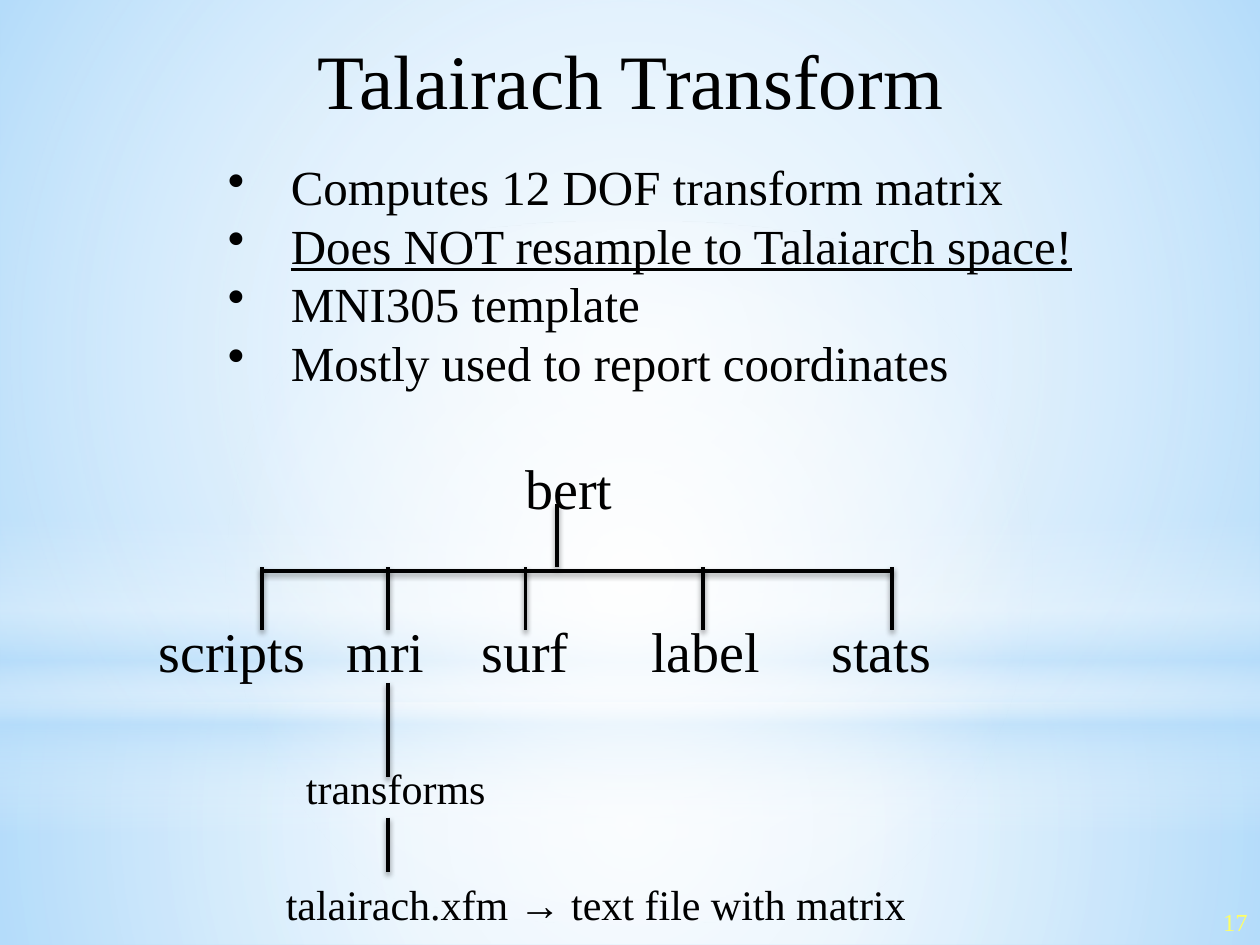
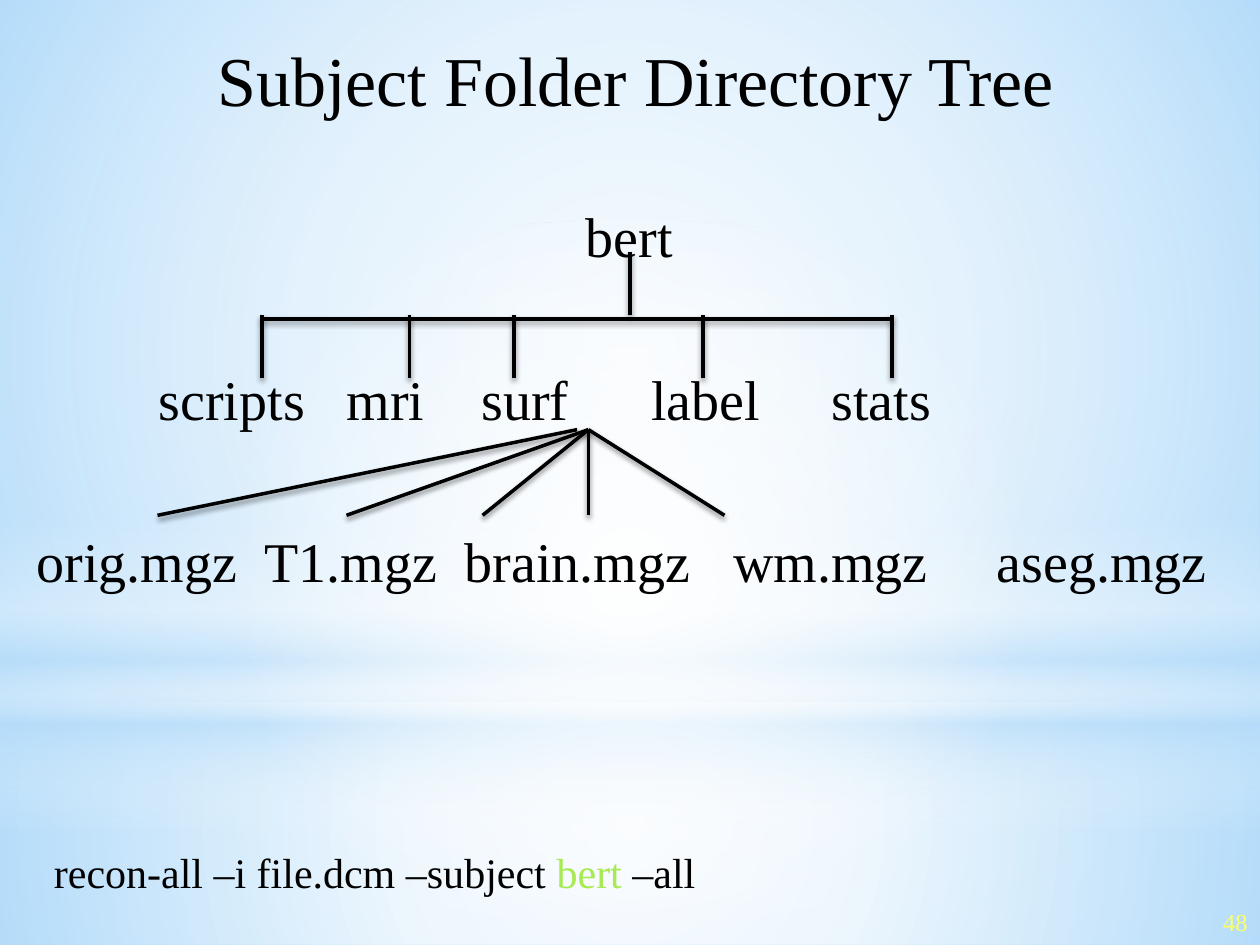
from lxml import etree
from pptx import Presentation
from pptx.dml.color import RGBColor
from pptx.enum.shapes import MSO_CONNECTOR, MSO_SHAPE
from pptx.enum.text import MSO_ANCHOR, PP_ALIGN
from pptx.oxml import parse_xml
from pptx.oxml.ns import qn
from pptx.util import Inches, Pt

RECT, OVAL = MSO_SHAPE.RECTANGLE, MSO_SHAPE.OVAL
STRAIGHT = MSO_CONNECTOR.STRAIGHT
LEFT, CENTER, RIGHT = PP_ALIGN.LEFT, PP_ALIGN.CENTER, PP_ALIGN.RIGHT
TOP, MIDDLE = MSO_ANCHOR.TOP, MSO_ANCHOR.MIDDLE

FONT = "Times New Roman"
BLACK, WHITE, SKY = "000000", "FFFFFF", "B4DCFA"
YELLOW, GREEN = "FFFF66", "A7EA52"
NS = 'xmlns:a="http://schemas.openxmlformats.org/drawingml/2006/main"'

RADIAL = ('<a:path path="circle"><a:fillToRect l="50000" t="50000" '
          'r="50000" b="50000"/></a:path>')
DOWNWARD = '<a:lin ang="5400000" scaled="0"/>'
BACKDROP = [
    (RECT, (0, 5.58, 10, 1.92), RADIAL,
     [(0, WHITE, 91), (37, WHITE, 76), (100, SKY, 79)]),
    (RECT, (0, 0, 10, 5.58), RADIAL,
     [(0, WHITE, 89), (48, WHITE, 62), (100, SKY, 79)]),
    (RECT, (0, 4.12, 10, 2.5), DOWNWARD,
     [(0, WHITE, 0), (29, WHITE, 30), (45, SKY, 40),
      (55, WHITE, 26), (65, SKY, 60), (100, WHITE, 0)]),
    (OVAL, (0, 1.75, 10, 5.58), RADIAL,
     [(0, WHITE, 100), (56, WHITE, 0)]),
]
SHADOW = (f'<a:effectLst {NS}><a:outerShdw blurRad="{Pt(3.1)}" '
          f'dist="{Pt(1.8)}" dir="5400000" rotWithShape="0">'
          f'<a:srgbClr val="{BLACK}"><a:alpha val="45000"/></a:srgbClr>'
          '</a:outerShdw></a:effectLst>')

FOLDERS = [("scripts", 1.26), ("mri", 2.75), ("surf", 3.82),
           ("label", 5.17), ("stats", 6.6)]
VOLUMES = [("orig.mgz", 0.29), ("T1.mgz", 2.1), ("brain.mgz", 3.69),
           ("wm.mgz", 5.82), ("aseg.mgz", 7.91)]
ROW_STEP = 1.29


def rgb(color):
    """Turn a hex string into a colour."""
    return RGBColor.from_string(color)


class Deck:
    """Holds the style and the current slide."""

    def __init__(self):
        """Start an empty 10 by 7.5 inch presentation."""
        self.prs = Presentation()
        self.prs.slide_width, self.prs.slide_height = Inches(10), Inches(7.5)
        self.s = None

    def slide(self, title, box, size, number):
        """Add a slide with backdrop, number and title."""
        self.s = self.prs.slides.add_slide(self.prs.slide_layouts[6])
        fill = self.s.background.fill
        fill.solid()
        fill.fore_color.rgb = rgb(SKY)
        for shape, place, direction, stops in BACKDROP:
            self.glow(shape, place, direction, stops)
        self.text((7.92, 7.15, 2.08, 0.5), [number], size=14, color=YELLOW,
                  align=RIGHT)
        self.text(box, [title], size=size, align=CENTER, anchor=MIDDLE)

    def glow(self, shape, place, direction, stops):
        """Add a shape filled with a translucent gradient."""
        sp = self.s.shapes.add_shape(shape, *map(Inches, place))
        sp.shadow.inherit = False
        sp.line.fill.background()
        sp.fill.background()
        gs = "".join(
            f'<a:gs pos="{pos * 1000}"><a:srgbClr val="{color}">'
            f'<a:alpha val="{alpha * 1000}"/></a:srgbClr></a:gs>'
            for pos, color, alpha in stops)
        spPr = sp._element.spPr
        spPr.replace(spPr.find(qn("a:noFill")), parse_xml(
            f'<a:gradFill {NS} rotWithShape="1"><a:gsLst>{gs}</a:gsLst>'
            f'{direction}</a:gradFill>'))

    def text(self, box, paragraphs, size=24, color=BLACK, align=LEFT,
             anchor=TOP, wrap=True, inset=True, bullet=None, spacing=None):
        """Add text; a paragraph is a string or a list of (text, format)."""
        tf = self.s.shapes.add_textbox(*map(Inches, box)).text_frame
        tf.word_wrap, tf.vertical_anchor = wrap, anchor
        if not inset:
            tf.margin_left = tf.margin_right = 0
            tf.margin_top = tf.margin_bottom = 0
        for i, runs in enumerate(paragraphs):
            p = tf.add_paragraph() if i else tf.paragraphs[0]
            p.alignment = align
            if spacing:
                p.line_spacing = Pt(spacing)
            if bullet:
                pPr = p._p.get_or_add_pPr()
                pPr.set("marL", str(Inches(0.5)))
                pPr.set("indent", str(Inches(-0.5)))
                etree.SubElement(pPr, qn("a:buChar")).set("char", bullet)
            for content, fmt in [(runs, {})] if isinstance(runs, str) else runs:
                r = p.add_run()
                r.text = content
                r.font.name, r.font.size = FONT, Pt(size)
                r.font.underline = fmt.get("underline", False)
                r.font.color.rgb = rgb(fmt.get("color", color))

    def line(self, x1, y1, x2, y2):
        """Add a black line with a soft shadow."""
        cx = self.s.shapes.add_connector(STRAIGHT,
                                         *map(Inches, (x1, y1, x2, y2)))
        cx.line.color.rgb, cx.line.width = rgb(BLACK), Pt(2)
        cx._element.spPr.append(parse_xml(SHADOW))

    def row(self, labels, top):
        """Add a row of tree labels."""
        for name, left in labels:
            self.text((left, top, 1.8, 0.51), [name], size=32, wrap=False,
                      inset=False)

    def tree(self, top, root_left, stem, drops):
        """Add the subject folder with its branches."""
        self.row([("bert", root_left)], top)
        self.row(FOLDERS, top + ROW_STEP)
        self.line(stem, top + 0.4, stem, top + 0.9)
        self.line(drops[0], top + 0.93, drops[-1], top + 0.93)
        for x in drops:
            self.line(x, top + 0.9, x, top + 1.4)


def main():
    """Build both slides."""
    deck = Deck()

    deck.slide("Talairach Transform", (1.67, 0, 6.67, 1.25), 44, "17")
    deck.text((1.71, 1.2, 7.79, 2.17),
              ["Computes 12 DOF transform matrix",
               [("Does NOT resample to Talaiarch space!",
                 {"underline": True})],
               "MNI305 template",
               "Mostly used to report coordinates"],
              size=28, bullet="•", spacing=33.4)
    deck.tree(3.6, 4.17, 4.42, [2.08, 3.08, 4.17, 5.58, 7.08])
    deck.line(3.08, 5.42, 3.08, 6.17)
    deck.text((2.33, 6, 1.64, 0.51), ["transforms"], wrap=False)
    deck.line(3.08, 6.49, 3.08, 6.92)
    deck.text((2.17, 6.92, 5.16, 0.51),
              ["talairach.xfm → text file with matrix"], wrap=False)

    deck.slide("Subject Folder Directory Tree", (1.17, 0, 7.75, 1.25), 40,
               "48")
    deck.tree(1.6, 4.65, 5, [2.08, 3.25, 4.08, 5.58, 7.08])
    deck.row(VOLUMES, 1.6 + 2 * ROW_STEP)
    for start, end in [(4.58, 1.25), (4.67, 2.75), (4.67, 3.83),
                       (4.67, 4.67), (4.67, 5.75)]:
        deck.line(start, 3.41, end, 4.09)
    deck.text((0.33, 6.67, 5.58, 0.5),
              [[("recon-all –i file.dcm –subject ", {}),
                ("bert ", {"color": GREEN}), ("–all", {})]])

    deck.prs.save("out.pptx")


if __name__ == "__main__":
    main()
